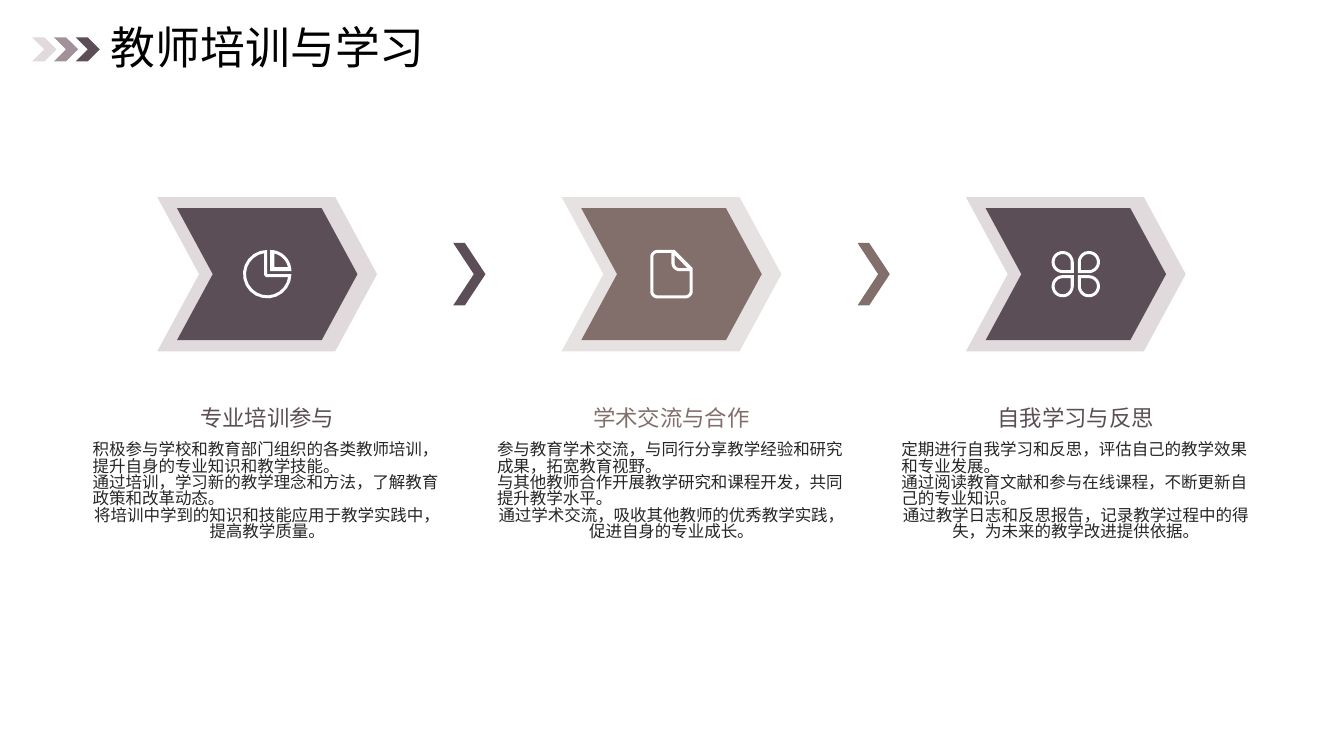
from dataclasses import dataclass
from math import cos, radians, sin

from lxml.etree import SubElement
from pptx import Presentation
from pptx.dml.color import RGBColor
from pptx.enum.shapes import MSO_SHAPE as Shape
from pptx.enum.text import MSO_ANCHOR as Anchor, MSO_AUTO_SIZE as Fit, PP_ALIGN as Align
from pptx.oxml.ns import qn
from pptx.util import Inches, Pt


@dataclass(frozen=True)
class Theme:
    font: str = "Noto Sans CJK SC"
    plum: str = "5C4E56"
    mauve: str = "A1919A"
    pale: str = "E0DADD"
    brown: str = "826F6C"
    sand: str = "E6E2E1"
    ink: str = "262626"
    black: str = "000000"
    white: str = "FFFFFF"
    title: float = 32
    head: float = 16
    body: float = 11.8
    tight: float = 0.83


T = Theme()
TITLE = "教师培训与学习"
STEPS = [
    ("专业培训参与", "pie", T.plum, T.pale, [
        "积极参与学校和教育部门组织的各类教师培训，提升自身的专业知识和教学技能。",
        "通过培训，学习新的教学理念和方法，了解教育政策和改革动态。",
        "将培训中学到的知识和技能应用于教学实践中，提高教学质量。"]),
    ("学术交流与合作", "page", T.brown, T.sand, [
        "参与教育学术交流，与同行分享教学经验和研究成果，拓宽教育视野。",
        "与其他教师合作开展教学研究和课程开发，共同提升教学水平。",
        "通过学术交流，吸收其他教师的优秀教学实践，促进自身的专业成长。"]),
    ("自我学习与反思", "clover", T.plum, T.pale, [
        "定期进行自我学习和反思，评估自己的教学效果和专业发展。",
        "通过阅读教育文献和参与在线课程，不断更新自己的专业知识。",
        "通过教学日志和反思报告，记录教学过程中的得失，为未来的教学改进提供依据。"]),
]
MARKS = [T.pale, T.mauve, T.plum]
FIRST, PITCH, MID = 2.65, 4.01, 2.72
WIDE = 3.46


def arc(x, y, r, start, end, steps=16):
    turns = [radians(start + (end - start) * i / steps) for i in range(steps + 1)]
    return [(x + r * cos(a), y + r * sin(a)) for a in turns]


def petal(sx, sy, r):
    ring = arc(-0.13, -0.12, r, 90, 360) + [(r - 0.13, r - 0.12)]
    return [(sx * x, sy * y) for x, y in ring]


ICONS = {
    "pie": [
        [(0, 0)] + arc(0, 0, 0.24, 0, 270),
        [(-0.03, 0)] + arc(0, 0, 0.21, 262, 8) + arc(0, 0, 0.03, 90, 180),
        [(0.03, -0.03)] + arc(0.03, -0.03, 0.21, 270, 360),
        [(0.07, -0.07)] + arc(0.03, -0.03, 0.18, 283, 347),
    ],
    "page": [
        arc(-0.14, -0.17, 0.07, 180, 270) + [(0.03, -0.24), (0.21, -0.06)]
        + arc(0.14, 0.17, 0.07, 0, 90) + arc(-0.14, 0.17, 0.07, 90, 180),
        arc(-0.14, -0.17, 0.04, 180, 270) + [(0, -0.21)]
        + arc(0.08, -0.11, 0.08, 180, 90) + [(0.18, -0.03)]
        + arc(0.14, 0.17, 0.04, 0, 90) + arc(-0.14, 0.17, 0.04, 90, 180),
        [(0.03, -0.19), (0.16, -0.06)] + arc(0.08, -0.11, 0.05, 90, 180),
    ],
    "clover": [petal(sx, sy, r) for sx in (1, -1) for sy in (1, -1) for r in (0.11, 0.08)],
}

deck = Presentation()
deck.slide_width, deck.slide_height = Inches(13.33), Inches(7.5)
slide = deck.slides.add_slide(deck.slide_layouts[5])
shapes = slide.shapes


def paint(shape, color):
    shape.shadow.inherit = False
    shape.fill.solid()
    shape.fill.fore_color.rgb = RGBColor.from_string(color)
    shape.line.fill.background()


def chevron(x, y, w, h, adj, color):
    shape = shapes.add_shape(Shape.CHEVRON, Inches(x - w / 2), Inches(y - h / 2), Inches(w), Inches(h))
    shape.adjustments[0] = adj
    paint(shape, color)


def icon(x, y, rings):
    unit = 1000
    rings = [[(px * unit, py * unit) for px, py in ring] for ring in rings]
    pen = shapes.build_freeform(*rings[0][0], scale=Inches(1) / unit)
    for ring in rings:
        pen.move_to(*ring[0])
        pen.add_line_segments(ring[1:], close=True)
    paint(pen.convert_to_shape(Inches(x), Inches(y)), T.white)


def write(box, lines, size, color, anchor, aligns, space=None):
    frame = box.text_frame
    frame.auto_size, frame.word_wrap = Fit.NONE, True
    frame.vertical_anchor = anchor
    frame.margin_left = frame.margin_right = frame.margin_top = frame.margin_bottom = 0
    frame.text = "\n".join(lines)
    for para, align in zip(frame.paragraphs, aligns):
        para.alignment, para.line_spacing = align, space
        font = para.font
        font.name, font.size = T.font, Pt(size)
        font.color.rgb = RGBColor.from_string(color)
        base = para._p.pPr.find(qn("a:defRPr"))
        SubElement(base, qn("a:ea"), typeface=T.font)


def text(x, y, w, h, *style):
    write(shapes.add_textbox(Inches(x), Inches(y), Inches(w), Inches(h)), *style)


head = shapes.title
head.left, head.top, head.width, head.height = map(Inches, (1.1, 0.23, 11.7, 0.47))
write(head, [TITLE], T.title, T.black, Anchor.MIDDLE, [Align.LEFT])

for i, color in reversed(list(enumerate(MARKS))):
    chevron(0.44 + i * 0.215, 0.49, 0.24, 0.24, 0.5, color)

for i, (name, sign, dark, light, lines) in enumerate(STEPS):
    x = FIRST + i * PITCH
    chevron(x, MID, 2.18, 1.53, 0.271, light)
    chevron(x, MID, 1.79, 1.31, 0.271, dark)
    icon(x, MID, ICONS[sign])
    text(x - WIDE / 2, 4.39, WIDE, 1.65, lines, T.body, T.ink, Anchor.TOP,
         [Align.LEFT, Align.LEFT, Align.CENTER], T.tight)
    text(x - WIDE / 2, 3.57, WIDE, 0.71, [name], T.head, dark, Anchor.BOTTOM, [Align.CENTER])
    if i < len(STEPS) - 1:
        chevron(x + PITCH / 2, MID, 0.32, 0.62, 0.639, dark)

deck.save("out.pptx")
